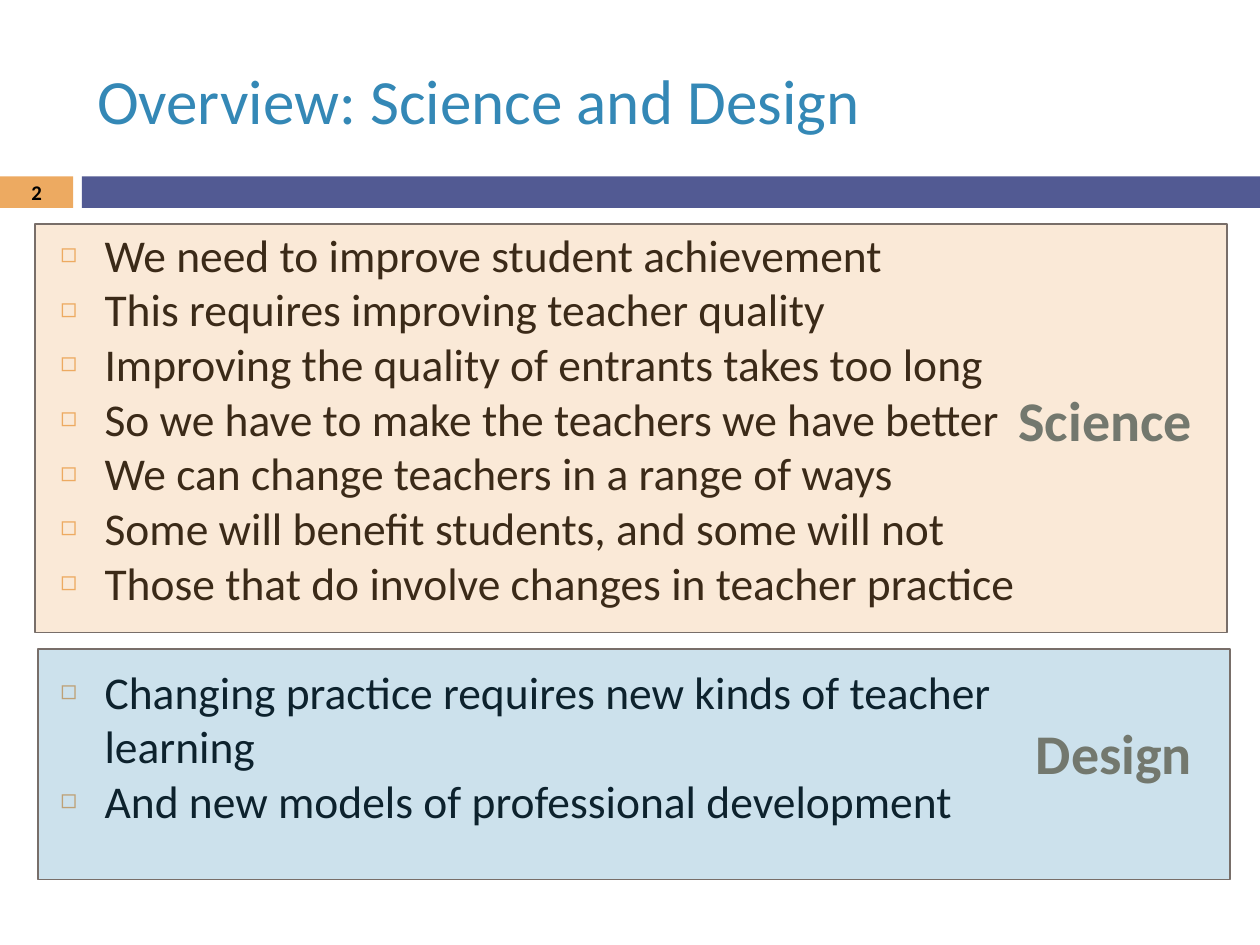
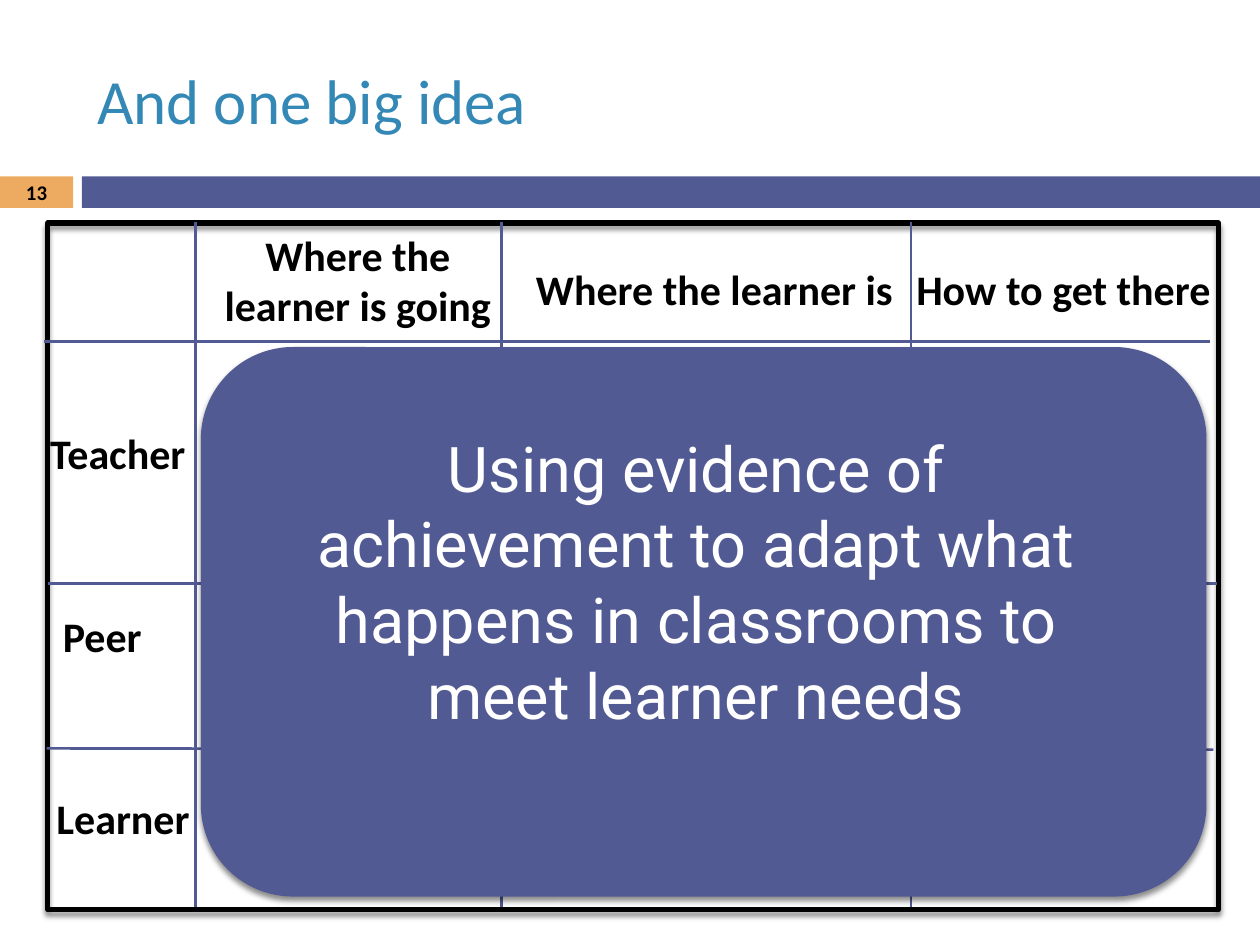
from dataclasses import dataclass

from lxml import etree
from pptx import Presentation
from pptx.dml.color import RGBColor
from pptx.enum.shapes import MSO_CONNECTOR, MSO_SHAPE
from pptx.enum.text import MSO_ANCHOR, MSO_AUTO_SIZE, PP_ALIGN
from pptx.oxml.ns import qn
from pptx.util import Inches, Pt

RECTANGLE = MSO_SHAPE.RECTANGLE
ROUNDED = MSO_SHAPE.ROUNDED_RECTANGLE
STRAIGHT = MSO_CONNECTOR.STRAIGHT
LEFT, CENTER, RIGHT = PP_ALIGN.LEFT, PP_ALIGN.CENTER, PP_ALIGN.RIGHT
TOP, MIDDLE = MSO_ANCHOR.TOP, MSO_ANCHOR.MIDDLE
NO_FIT = MSO_AUTO_SIZE.NONE
TITLE_AND_CONTENT, TITLE_ONLY = 1, 5


@dataclass(frozen=True)
class Theme:
    blue: str = "3488B6"
    indigo: str = "525A93"
    orange: str = "EDAA61"
    black: str = "000000"
    white: str = "FFFFFF"
    panel_line: str = "786E69"
    panel_label: str = "73786E"
    font: str = "Calibri"
    idea_font: str = "Roboto"
    title_size: float = 36
    body_size: float = 26
    body_pitch: float = 31.2
    label_size: float = 32
    heading_size: float = 24
    number_size: float = 11.9


@dataclass(frozen=True)
class Box:
    left: float
    top: float
    width: float
    height: float

    def inner(self, left, top, width, height):
        return Box(self.left + left, self.top + top, width, height)

    def lengths(self):
        return [Inches(value) for value in (self.left, self.top, self.width, self.height)]


THEME = Theme()
TITLE_BOX = Box(0.67, 0.25, 8.92, 1.08)
BAND_BOX = Box(0, 1.4, 10, 0.25)
BODY_BOX = Box(0.38, 1.75, 8.54, 4.95)
SCIENCE_BOX = Box(0.28, 1.78, 9.46, 3.24)
DESIGN_BOX = Box(0.3, 5.15, 9.46, 1.83)
GRID_BOX = Box(0.38, 1.77, 9.29, 5.45)
IDEA_BOX = Box(1.6, 2.76, 7.97, 4.35)

SCIENCE_POINTS = [
    "We need to improve student achievement",
    "This requires improving teacher quality",
    "Improving the quality of entrants takes too long",
    "So we have to make the teachers we have better",
    "We can change teachers in a range of ways",
    "Some will benefit students, and some will not",
    "Those that do involve changes in teacher practice",
]
DESIGN_POINTS = [
    "Changing practice requires new kinds of teacher learning",
    "And new models of professional development",
]


def colour(code):
    return RGBColor.from_string(code)


def add_child(parent, tag, **attributes):
    return etree.SubElement(parent, qn(tag), attributes)


def write(para, text, size, code, font=THEME.font, bold=False, align=LEFT):
    para.alignment = align
    span = para.add_run()
    span.text = text
    span.font.name = font
    span.font.size = Pt(size)
    span.font.bold = bold
    span.font.color.rgb = colour(code)


def add_shape(shapes, kind, box, fill=None, line=None, weight=1.0):
    shape = shapes.add_shape(kind, *box.lengths())
    shape.shadow.inherit = False
    if fill:
        shape.fill.solid()
        shape.fill.fore_color.rgb = colour(fill)
    else:
        shape.fill.background()
    if line:
        shape.line.color.rgb = colour(line)
        shape.line.width = Pt(weight)
    else:
        shape.line.fill.background()
    return shape


def set_opacity(shape, percent):
    tint = shape.element.spPr.find(qn("a:solidFill")).find(qn("a:srgbClr"))
    add_child(tint, "a:alpha", val=str(percent * 1000))


def cast_shadow(shape):
    effects = shape.element.spPr.find(qn("a:effectLst"))
    shadow = add_child(effects, "a:outerShdw", blurRad=str(Pt(3)), dist=str(Pt(2.4)),
                       dir="5400000", rotWithShape="0")
    tint = add_child(shadow, "a:srgbClr", val=THEME.black)
    add_child(tint, "a:alpha", val="45000")


def add_label(shapes, box, text, size, code=THEME.black, align=LEFT, wrap=True):
    label = shapes.add_textbox(*box.lengths())
    frame = label.text_frame
    frame.word_wrap = wrap
    write(frame.paragraphs[0], text, size, code, bold=True, align=align)
    return frame


def add_rule(page, start, end):
    rule = page.shapes.add_connector(STRAIGHT, *[Inches(value) for value in start + end])
    rule.line.color.rgb = colour(THEME.indigo)
    rule.line.width = Pt(1.5)
    add_child(rule.element.spPr, "a:effectLst")


def place(placeholder, box, anchor):
    placeholder.left, placeholder.top, placeholder.width, placeholder.height = box.lengths()
    frame = placeholder.text_frame
    frame.word_wrap = True
    frame.auto_size = NO_FIT
    frame.vertical_anchor = anchor
    return frame


def add_band(page, box, number):
    number_box = box.inner(0, 0, 0.58, box.height)
    add_shape(page.shapes, RECTANGLE, number_box, THEME.orange)
    add_shape(page.shapes, RECTANGLE, box.inner(0.65, 0, box.width - 0.65, box.height), THEME.indigo)
    frame = add_label(page.shapes, number_box, str(number), THEME.number_size, align=CENTER)
    frame.vertical_anchor = MIDDLE
    frame.margin_left = frame.margin_right = frame.margin_top = frame.margin_bottom = 0


def start_page(deck, layout, title, number):
    page = deck.slides.add_slide(deck.slide_layouts[layout])
    frame = place(page.shapes.title, TITLE_BOX, MIDDLE)
    write(frame.paragraphs[0], title, THEME.title_size, THEME.blue)
    add_band(page, BAND_BOX, number)
    return page


def add_points(page, box):
    frame = place(page.placeholders[1], box, TOP)
    for index, text in enumerate(SCIENCE_POINTS + DESIGN_POINTS):
        para = frame.add_paragraph() if index else frame.paragraphs[0]
        starts_design = index == len(SCIENCE_POINTS)
        para.line_spacing = Pt(THEME.body_pitch)
        para.space_before = Pt(THEME.body_pitch if starts_design else 0)
        write(para, text, THEME.body_size, THEME.black)
        settings = para._p.get_or_add_pPr()
        settings.set("marL", str(Inches(0.35)))
        settings.set("indent", str(Inches(-0.35)))
        add_child(add_child(settings, "a:buClr"), "a:srgbClr", val=THEME.orange)
        add_child(settings, "a:buSzPct", val="60000")
        add_child(settings, "a:buChar", char="◻")


def add_panel(page, box, fill, text, label_box):
    group = page.shapes.add_group_shape()
    panel = add_shape(group.shapes, RECTANGLE, box, fill, THEME.panel_line)
    set_opacity(panel, 25)
    add_label(group.shapes, label_box, text, THEME.label_size, THEME.panel_label, RIGHT)


def add_grid(page, box):
    cast_shadow(add_shape(page.shapes, RECTANGLE, box, line=THEME.black, weight=3))
    right, bottom = box.left + box.width, box.top + box.height
    for offset, overhang, short, drop in ((0.94, 0.03, 0.07, 0), (2.86, 0, 0.01, 0),
                                          (4.17, 0.01, 0.04, 0.01)):
        height = box.top + offset
        add_rule(page, (box.left - overhang, height), (right - short, height + drop))
    for offset in (1.17, 3.6, 6.85):
        add_rule(page, (box.left + offset, box.top - 0.01), (box.left + offset, bottom - 0.02))

    headings = [
        ("Where the learner is going", (1.1, 0, 2.72, 0.91), CENTER, True),
        ("Where the learner is", (3.76, 0.27, 3.06, 0.5), CENTER, False),
        ("How to get there", (6.78, 0.27, 2.56, 0.5), CENTER, False),
        ("Teacher", (-0.08, 1.57, 1.29, 0.5), LEFT, False),
        ("Peer", (0.02, 3.03, 0.98, 0.5), LEFT, True),
        ("Learner", (-0.03, 4.47, 1.27, 0.5), LEFT, False),
    ]
    for text, offsets, align, wrap in headings:
        add_label(page.shapes, box.inner(*offsets), text, THEME.heading_size, align=align, wrap=wrap)


def add_idea(page, box):
    cast_shadow(add_shape(page.shapes, ROUNDED, box, THEME.indigo, THEME.indigo, 0.79))
    caption = add_shape(page.shapes, ROUNDED, box.inner(0.47, 0.43, 6.91, 3.46))
    frame = caption.text_frame
    frame.word_wrap = True
    frame.vertical_anchor = TOP
    write(frame.paragraphs[0],
          "Using evidence of achievement to adapt what happens in classrooms to meet learner needs",
          THEME.title_size, THEME.white, THEME.idea_font, align=CENTER)


def build_overview(deck):
    page = start_page(deck, TITLE_AND_CONTENT, "Overview: Science and Design", 2)
    add_points(page, BODY_BOX)
    add_panel(page, DESIGN_BOX, THEME.blue, "Design", DESIGN_BOX.inner(7.52, 0.5, 1.74, 0.64))
    add_panel(page, SCIENCE_BOX, THEME.orange, "Science", SCIENCE_BOX.inner(7.41, 1.23, 1.87, 0.64))


def build_big_idea(deck):
    page = start_page(deck, TITLE_ONLY, "And one big idea", 13)
    add_grid(page, GRID_BOX)
    add_idea(page, IDEA_BOX)


def main():
    deck = Presentation()
    deck.slide_width, deck.slide_height = Inches(10), Inches(7.5)
    build_overview(deck)
    build_big_idea(deck)
    deck.save("out.pptx")


if __name__ == "__main__":
    main()
